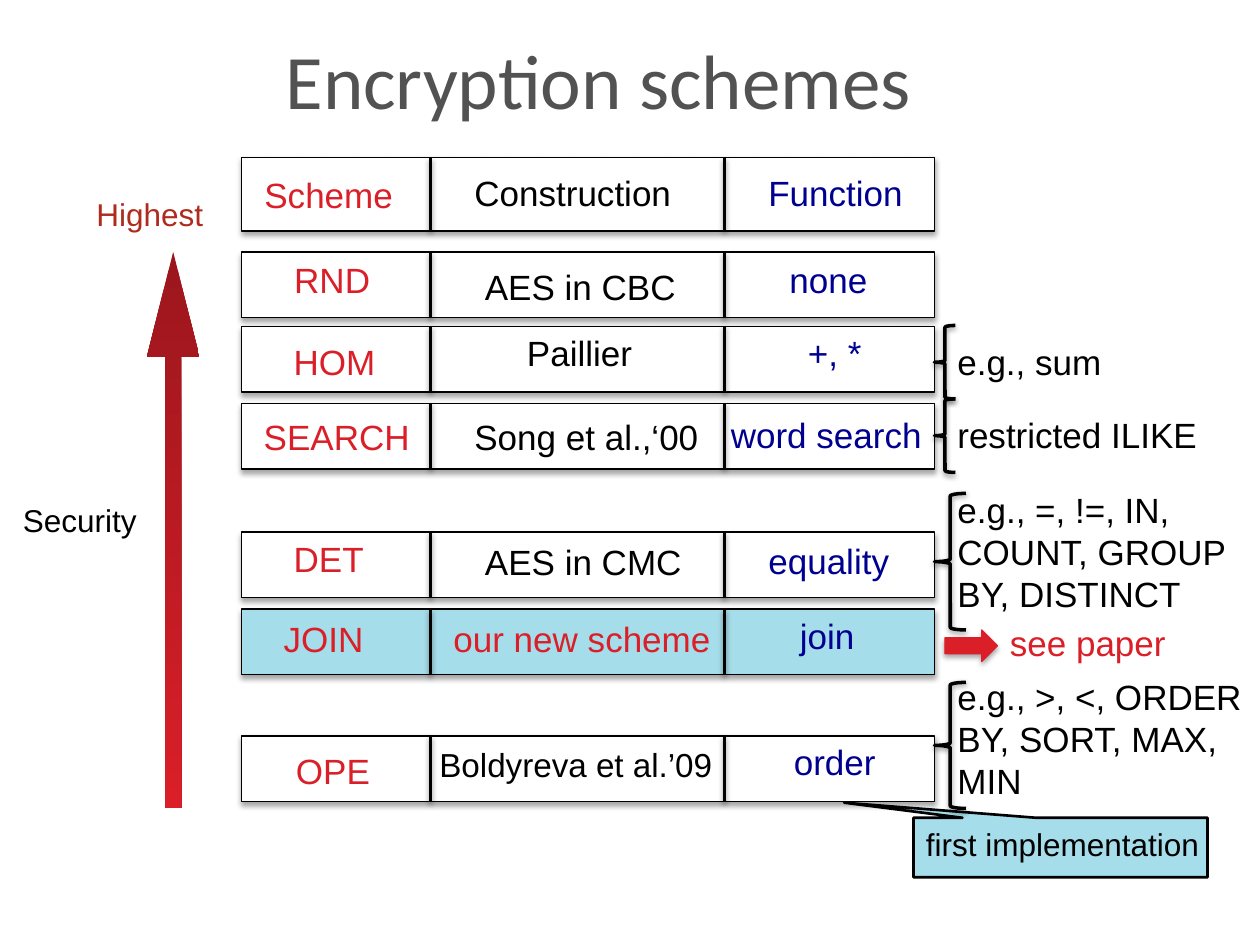
from dataclasses import dataclass

from lxml.etree import SubElement
from pptx import Presentation
from pptx.dml.color import RGBColor
from pptx.enum.shapes import MSO_CONNECTOR as Connector, MSO_SHAPE as Shape
from pptx.enum.text import MSO_ANCHOR as Anchor, MSO_AUTO_SIZE as AutoSize, PP_ALIGN as Align
from pptx.oxml.ns import qn
from pptx.util import Pt


@dataclass(frozen=True)
class Theme:
    black: str = "000000"
    white: str = "FFFFFF"
    grey: str = "525252"
    red: str = "DA1F28"
    dark_red: str = "9C161D"
    brick: str = "AF2B1D"
    navy: str = "000090"
    aqua: str = "A6DDEA"
    title_font: str = "Calibri"
    body_font: str = "Arial"
    title_size: int = 44
    body_size: int = 20
    citation_size: int = 19
    label_size: int = 18
    thin: float = 0.75
    medium: float = 1.5
    thick: float = 2


THEME = Theme()
TABLE_LEFT, TABLE_WIDTH = 138, 396
DIVIDERS = (246, 414)
HEADER_HEIGHT, ROW_HEIGHT = 42, 37.5
COLUMN_COLORS = (THEME.red, THEME.black, THEME.navy)
CENTER = {"align": Align.CENTER}

ROWS = [
    (90, [("Scheme", 144, 5.8, 138, {}),
          ("Construction", 264, 4.3, 132, {}),
          ("Function", 432, 4.3, 138, {})]),
    (144, [("RND", 161, 0, 85, {}),
           ("AES in CBC", 270, 4.3, 150, {}),
           ("none", 444, 0, 66, {})]),
    (186.5, [("HOM", 160.7, 4.3, 73, {}),
             ("Paillier", 294, -0.7, 132, {}),
             ("+, *", 420, -0.7, 114, CENTER)]),
    (230.5, [("SEARCH", 143.6, 3.5, 102, {}),
             ("Song et al.,‘00", 264, 3.5, 156, {}),
             ("word search", 403.2, 2.1, 138, CENTER)]),
    (304, [("DET", 160.7, -0.2, 73, {}),
           ("AES in CMC", 270, 1.3, 156, {}),
           ("equality", 432, 0.6, 108, {})]),
    (348, [("JOIN", 155, 1.2, 85, {}),
           ("our new scheme", 252, 5.5, 192, {"color": THEME.red, "spacing": 20}),
           ("join", 450, -0.2, 72, {})]),
    (420.5, [("OPE", 162, 4.3, 96, {}),
             ("Boldyreva et al.’09", 238.3, 1.4, 181.5,
              {"align": Align.CENTER, "size": THEME.citation_size}),
             ("order", 432, -0.7, 90, CENTER)]),
]
HEADER_TOP, JOIN_TOP = ROWS[0][0], ROWS[5][0]

BRACES = [(186, 12, 42), (228, 12, 42), (282, 18, 78), (390, 18, 72)]
EXAMPLES = [
    ("e.g., sum", 190.8, 216, 31.7),
    ("restricted ILIKE", 232.6, 216, 31.7),
    ("e.g., =, !=, IN, COUNT, GROUP BY, DISTINCT", 275.8, 192, 80),
    ("e.g., >, <, ORDER BY, SORT, MAX, MIN", 382.3, 204, 80),
]


def write(frame, text, color=THEME.black, size=THEME.body_size, font=THEME.body_font,
          align=Align.LEFT, spacing=None):
    paragraph = frame.paragraphs[0]
    paragraph.alignment = align
    if spacing:
        paragraph.line_spacing = Pt(spacing)
    run = paragraph.add_run()
    run.text = text
    run.font.name = font
    run.font.size = Pt(size)
    run.font.color.rgb = RGBColor.from_string(color)


class SlideBuilder:
    def __init__(self, slide, theme):
        self.slide = slide
        self.theme = theme

    def title(self, text, left, top, width, height):
        title = self.slide.shapes.title
        title.left, title.top, title.width, title.height = map(Pt, (left, top, width, height))
        title.text_frame.vertical_anchor = Anchor.MIDDLE
        write(title.text_frame, text, color=self.theme.grey, size=self.theme.title_size,
              font=self.theme.title_font, align=Align.CENTER)

    def label(self, text, left, top, width, height=31.7, **text_format):
        box = self.slide.shapes.add_textbox(*map(Pt, (left, top, width, height)))
        box.text_frame.word_wrap = True
        box.text_frame.auto_size = AutoSize.SHAPE_TO_FIT_TEXT
        write(box.text_frame, text, **text_format)

    def shape(self, kind, left, top, width, height, fill=None, line=None, weight=THEME.thin,
              adjustments=(), shadow=None):
        shape = self.slide.shapes.add_shape(kind, *map(Pt, (left, top, width, height)))
        shape.shadow.inherit = False
        for index, value in enumerate(adjustments):
            shape.adjustments[index] = value
        if fill:
            shape.fill.solid()
            shape.fill.fore_color.rgb = RGBColor.from_string(fill)
        else:
            shape.fill.background()
        if line:
            self.stroke(shape, line, weight)
        else:
            shape.line.fill.background()
        if shadow:
            self.cast_shadow(shape.element.spPr.find(qn("a:effectLst")), *shadow)
        return shape

    def gradient_arrow(self, left, top, width, height, adjustments, colors):
        arrow = self.shape(Shape.UP_ARROW, left, top, width, height, adjustments=adjustments)
        arrow.fill.gradient()
        arrow.fill.gradient_angle = 270
        for stop, color in zip(arrow.fill.gradient_stops, colors):
            stop.color.rgb = RGBColor.from_string(color)

    def divider(self, x, top, height):
        divider = self.slide.shapes.add_connector(
            Connector.STRAIGHT, *map(Pt, (x, top, x, top + height)))
        self.stroke(divider, self.theme.black, self.theme.thick)
        effects = SubElement(divider.element.spPr, qn("a:effectLst"))
        self.cast_shadow(effects, *LINE_SHADOW)

    def stroke(self, shape, color, weight):
        shape.line.color.rgb = RGBColor.from_string(color)
        shape.line.width = Pt(weight)

    def cast_shadow(self, effects, opacity, blur, distance):
        outer = SubElement(effects, qn("a:outerShdw"), blurRad=str(Pt(blur)),
                           dist=str(Pt(distance)), dir="5400000", rotWithShape="0")
        color = SubElement(outer, qn("a:srgbClr"), val=self.theme.black)
        SubElement(color, qn("a:alpha"), val=str(opacity * 1000))


BOX_SHADOW = (35, 3.1, 1.8)
LINE_SHADOW = (38, 3.1, 1.6)


def main():
    deck = Presentation()
    deck.slide_width, deck.slide_height = Pt(720), Pt(540)
    builder = SlideBuilder(deck.slides.add_slide(deck.slide_layouts[5]), THEME)
    builder.title("Encryption schemes", 18, 0, 648, 90)

    for top, cells in ROWS:
        height = HEADER_HEIGHT if top == HEADER_TOP else ROW_HEIGHT
        fill = THEME.aqua if top == JOIN_TOP else THEME.white
        builder.shape(Shape.RECTANGLE, TABLE_LEFT, top, TABLE_WIDTH, height,
                      fill=fill, line=THEME.black, shadow=BOX_SHADOW)
        for x in DIVIDERS:
            builder.divider(x, top, height)
        for (text, left, offset, width, text_format), color in zip(cells, COLUMN_COLORS):
            builder.label(text, left, top + offset, width, **{"color": color, **text_format})

    builder.shape(Shape.RECTANGULAR_CALLOUT, 522, 467.3, 168, 34, fill=THEME.aqua,
                  line=THEME.black, weight=THEME.medium, adjustments=(-0.736, -0.754))
    builder.label("first implementation", 522, 468, 192, 29, size=THEME.label_size)

    for top, width, height in BRACES:
        builder.shape(Shape.LEFT_BRACE, 534, top, width, height, line=THEME.black,
                      weight=THEME.thick, shadow=LINE_SHADOW)
    for text, top, width, height in EXAMPLES:
        builder.label(text, 540, top, width, height)

    builder.gradient_arrow(84, 144, 30, 318, (0.3, 1.993), (THEME.dark_red, THEME.red))
    builder.label("Highest", 48, 108, 84, 29, color=THEME.brick, size=THEME.label_size)
    builder.label("Security", 6, 283, 102, 29, size=THEME.label_size)

    builder.shape(Shape.RIGHT_ARROW, 540, 360, 30, 18, fill=THEME.red, line=THEME.red,
                  shadow=BOX_SHADOW)
    builder.label("see paper", 570, 351.4, 108, color=THEME.red)
    deck.save("out.pptx")


if __name__ == "__main__":
    main()
